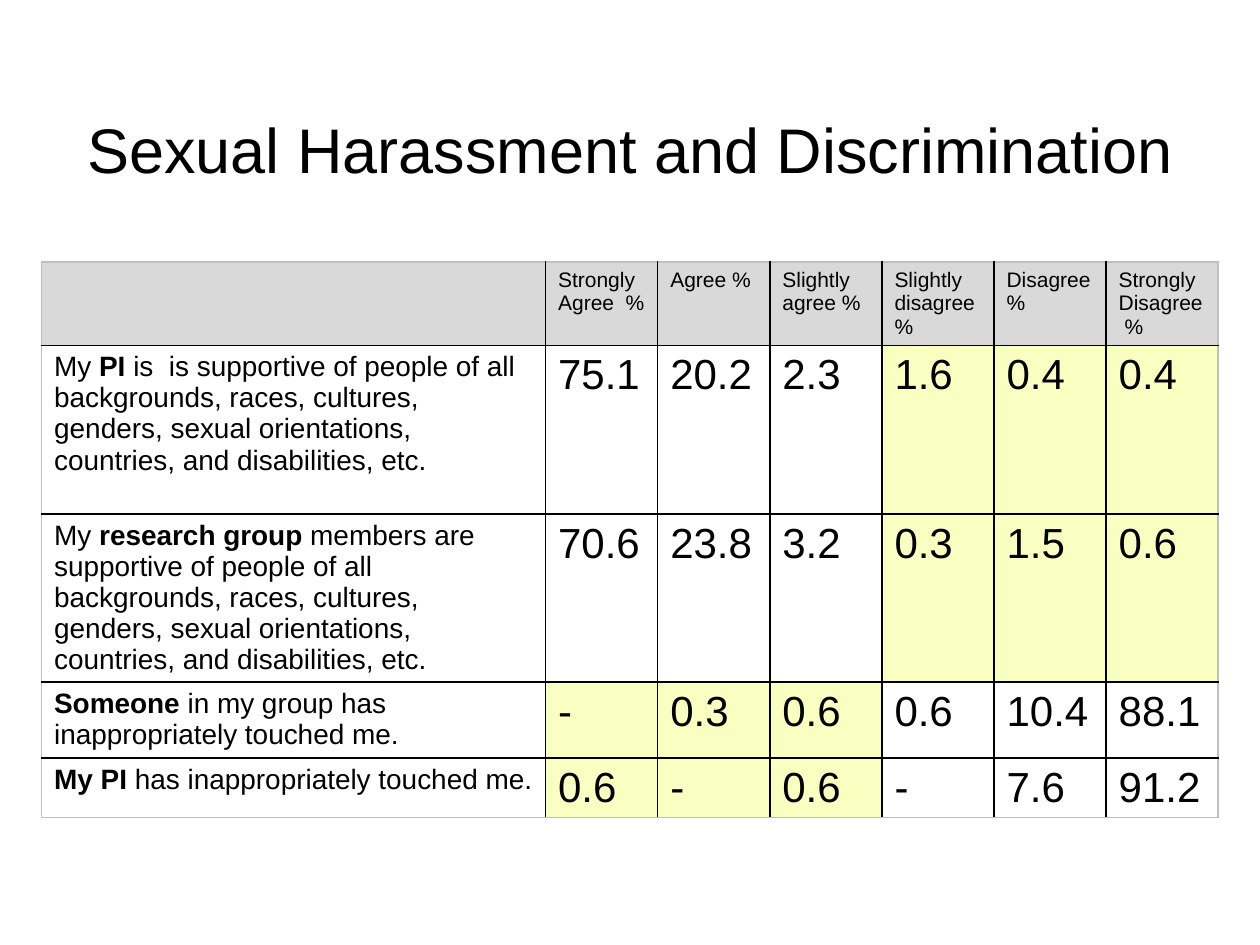
"""Build the survey slide on harassment and discrimination."""
from lxml import etree
from pptx import Presentation
from pptx.dml.color import RGBColor
from pptx.enum.text import MSO_ANCHOR, PP_ALIGN
from pptx.oxml.ns import qn
from pptx.util import Inches, Pt

TOP, LEFT, CENTER = MSO_ANCHOR.TOP, PP_ALIGN.LEFT, PP_ALIGN.CENTER
FONT = "Arial"
HEX = {"ink": "000000", "head": "D9D9D9", "mark": "F8FFC0",
       "plain": "FFFFFF", "edge": "BFBFBF"}

TITLE = "Sexual Harassment and Discrimination"
HEADS = ["Strongly Agree  %", "Agree %", "Slightly agree %",
         "Slightly disagree %", "Disagree %", "Strongly Disagree  %"]
GROUPS = ("supportive of people of all backgrounds, races, cultures, "
          "genders, sexual orientations, countries, and disabilities, etc.")
ROWS = [
    {"text": ("My ", "PI", " is  is " + GROUPS), "marks": (4, 5, 6),
     "values": ["75.1", "20.2", "2.3", "1.6", "0.4", "0.4"]},
    {"text": ("My ", "research group ", "members are " + GROUPS),
     "marks": (4, 5, 6),
     "values": ["70.6", "23.8", "3.2", "0.3", "1.5", "0.6"]},
    {"text": ("", "Someone", " in my group has inappropriately touched me."),
     "marks": (1, 2, 3),
     "values": ["-", "0.3", "0.6", "0.6", "10.4", "88.1"]},
    {"text": ("", "My PI ", "has inappropriately touched me."),
     "marks": (1, 2, 3),
     "values": ["0.6", "-", "0.6", "-", "7.6", "91.2"]},
]
WIDTHS = [4] + [0.89] * 6
HEIGHTS = [0.66, 1.34, 1.33, 0.6, 0.47]


def style(para, size, align=LEFT):
    para.alignment = align
    para.font.size = Pt(size)
    para.font.name = FONT
    para.font.bold = False
    para.font.color.rgb = RGBColor.from_string(HEX["ink"])


def border(cell, outer):
    props = cell._tc.get_or_add_tcPr()
    for spot, side in enumerate("LRTB"):
        line = etree.Element(qn("a:ln" + side), w=str(Pt(1)))
        fill = etree.SubElement(line, qn("a:solidFill"))
        tone = HEX["edge" if side in outer else "ink"]
        etree.SubElement(fill, qn("a:srgbClr"), val=tone)
        props.insert(spot, line)


def paint(cell, tone, outer):
    cell.fill.solid()
    cell.fill.fore_color.rgb = RGBColor.from_string(HEX[tone])
    border(cell, outer)


def write(cell, parts, size):
    para = cell.text_frame.paragraphs[0]
    for spot, part in enumerate(parts):
        if part:
            run = para.add_run()
            run.text = part
            if spot == 1:
                run.font.bold = True
    style(para, size)


def add_title(slide):
    title = slide.shapes.title
    title.left, title.top = Inches(0.5), Inches(0.83)
    title.width, title.height = Inches(9), Inches(1.08)
    frame = title.text_frame
    frame.text = TITLE
    frame.vertical_anchor = TOP
    frame.margin_top = Inches(0.05)
    style(frame.paragraphs[0], 36, CENTER)


def add_grid(slide):
    table = slide.shapes.add_table(
        len(HEIGHTS), len(WIDTHS), Inches(0.33), Inches(2.08),
        Inches(sum(WIDTHS)), Inches(sum(HEIGHTS))).table
    for col, width in zip(table.columns, WIDTHS):
        col.width = Inches(width)
    for row, height in zip(table.rows, HEIGHTS):
        row.height = Inches(height)
    last_row, last_col = len(HEIGHTS) - 1, len(WIDTHS) - 1
    lines = [{"text": (), "values": HEADS, "marks": ()}] + ROWS
    for r, line in enumerate(lines):
        cells = [line["text"]] + [(value,) for value in line["values"]]
        for c, parts in enumerate(cells):
            cell = table.cell(r, c)
            write(cell, parts, 12 if r == 0 else 24 if c else 16)
            hits = (c == 0, c == last_col, r == 0, r == last_row)
            outer = [side for side, hit in zip("LRTB", hits) if hit]
            marked = c in line["marks"]
            tone = "head" if r == 0 else "mark" if marked else "plain"
            paint(cell, tone, outer)


def main():
    deck = Presentation()
    deck.slide_width, deck.slide_height = Inches(10), Inches(7.5)
    slide = deck.slides.add_slide(deck.slide_layouts[5])
    add_title(slide)
    add_grid(slide)
    deck.save("out.pptx")


if __name__ == "__main__":
    main()
